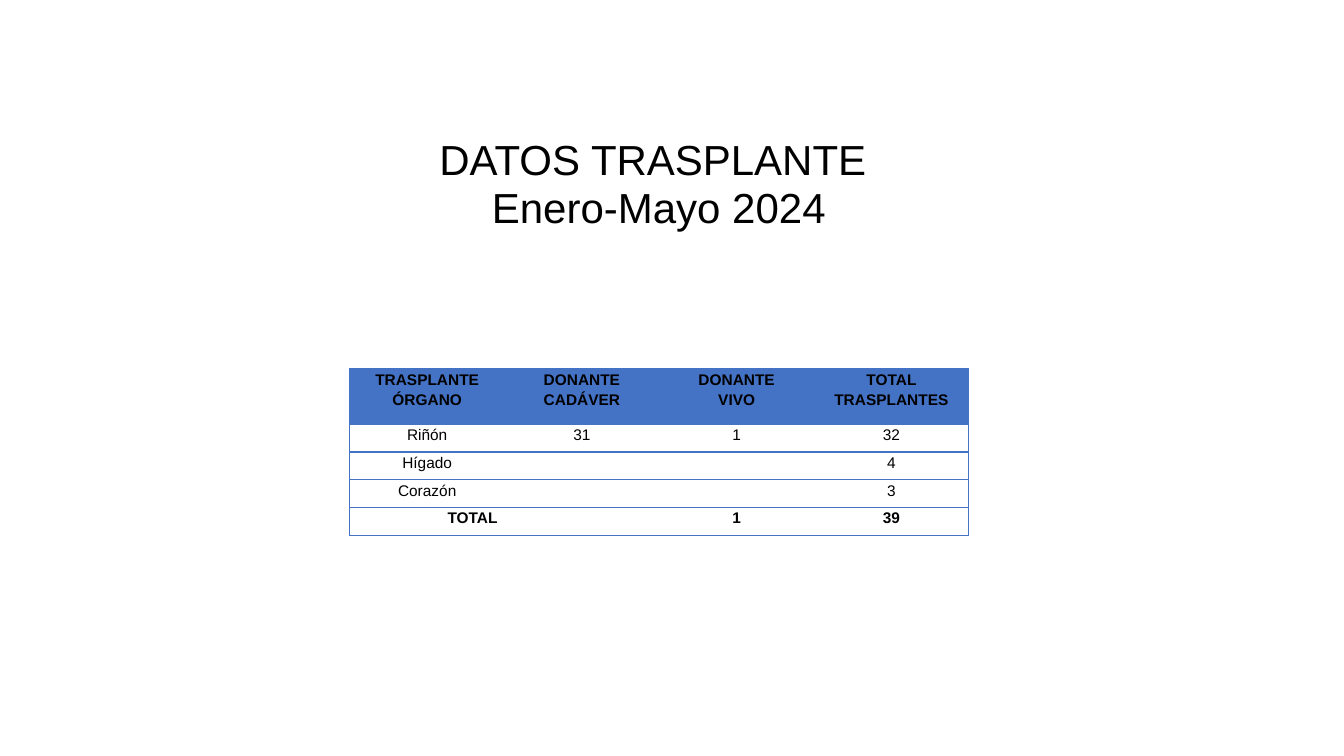
from dataclasses import dataclass

from lxml import etree
from pptx import Presentation
from pptx.dml.color import RGBColor
from pptx.enum.text import MSO_ANCHOR, PP_ALIGN
from pptx.oxml.ns import qn
from pptx.util import Inches, Pt

TOP = MSO_ANCHOR.TOP
MID = PP_ALIGN.CENTER
RIGHT = PP_ALIGN.RIGHT


@dataclass(frozen=True)
class Theme:
    """Colours, font and type sizes of the slide."""
    font: str = "Arial"
    ink: str = "000000"
    blue: str = "4472C4"
    white: str = "FFFFFF"
    title: int = 30
    body: int = 11
    line: int = 1


THEME = Theme()
TITLE = ["DATOS TRASPLANTE ", "Enero-Mayo 2024"]
ROWS = [
    [["TRASPLANTE ÓRGANO"], ["DONANTE", "CADÁVER"],
     ["DONANTE", "VIVO"], ["TOTAL", "TRASPLANTES"]],
    [["Riñón"], ["31"], ["1"], ["32"]],
    [["Hígado"], [""], [""], ["4"]],
    [["Corazón"], [""], [""], ["3"]],
    [["TOTAL"], [""], ["1"], ["39"]],
]
HEAD, LAST = 0, len(ROWS) - 1


def add_run(para, text, size, bold=False):
    """Add one styled run to a paragraph."""
    run = para.add_run()
    run.text = text
    font = run.font
    font.name, font.size, font.bold = THEME.font, Pt(size), bold
    font.color.rgb = RGBColor.from_string(THEME.ink)


def add_title(slide):
    """Add the centred title in two lines."""
    box = slide.shapes.add_textbox(
        Inches(2.87), Inches(1.3), Inches(7.33), Inches(1.28))
    frame = box.text_frame
    frame.word_wrap = True
    frame.vertical_anchor = TOP
    frame.margin_top = Inches(0.06)
    para = frame.paragraphs[0]
    para.alignment = MID
    para.line_spacing = 0.95
    for i, text in enumerate(TITLE):
        if i:
            para.add_line_break()
        add_run(para, text, THEME.title)


def set_edges(cell, sides):
    """Draw the named sides of a cell and clear the others."""
    props = cell._tc.get_or_add_tcPr()
    for side in "LRTB":
        line = etree.SubElement(props, qn("a:ln" + side), w=str(Pt(THEME.line)))
        if side in sides:
            fill = etree.SubElement(line, qn("a:solidFill"))
            etree.SubElement(fill, qn("a:srgbClr"), val=THEME.blue)
        else:
            etree.SubElement(line, qn("a:noFill"))


def fill_cell(cell, lines, align, bold, fill):
    """Set the text, margins and fill of a cell."""
    cell.margin_left = cell.margin_right = Inches(0.07)
    cell.margin_top = cell.margin_bottom = 0
    cell.vertical_anchor = TOP
    cell.fill.solid()
    cell.fill.fore_color.rgb = RGBColor.from_string(fill)
    frame = cell.text_frame
    for i, text in enumerate(lines):
        para = frame.add_paragraph() if i else frame.paragraphs[0]
        para.alignment = align
        para.line_spacing = 1.15
        if text:
            add_run(para, text, THEME.body, bold)
        else:
            etree.SubElement(
                para._p, qn("a:endParaRPr"), sz=str(THEME.body * 100))


def add_grid(slide):
    """Add the table of transplants by organ."""
    cols = len(ROWS[HEAD])
    grid = slide.shapes.add_table(
        len(ROWS), cols, Inches(3.47), Inches(3.66),
        Inches(6.14), Inches(1.65)).table
    grid.first_row = grid.horz_banding = False
    for r, row in enumerate(ROWS):
        grid.rows[r].height = Inches(0.55 if r == HEAD else 0.275)
        for c, lines in enumerate(row):
            cell = grid.cell(r, c)
            sides = "TB" + "L" * (c == 0) + "R" * (c == cols - 1)
            set_edges(cell, sides)
            align = RIGHT if r == LAST and c == 0 else MID
            fill = THEME.blue if r == HEAD else THEME.white
            fill_cell(cell, lines, align, r in (HEAD, LAST), fill)


def main():
    """Build and save the slide."""
    deck = Presentation()
    deck.slide_width, deck.slide_height = Inches(13.33), Inches(7.5)
    slide = deck.slides.add_slide(deck.slide_layouts[6])
    add_title(slide)
    add_grid(slide)
    deck.save("out.pptx")


if __name__ == "__main__":
    main()
